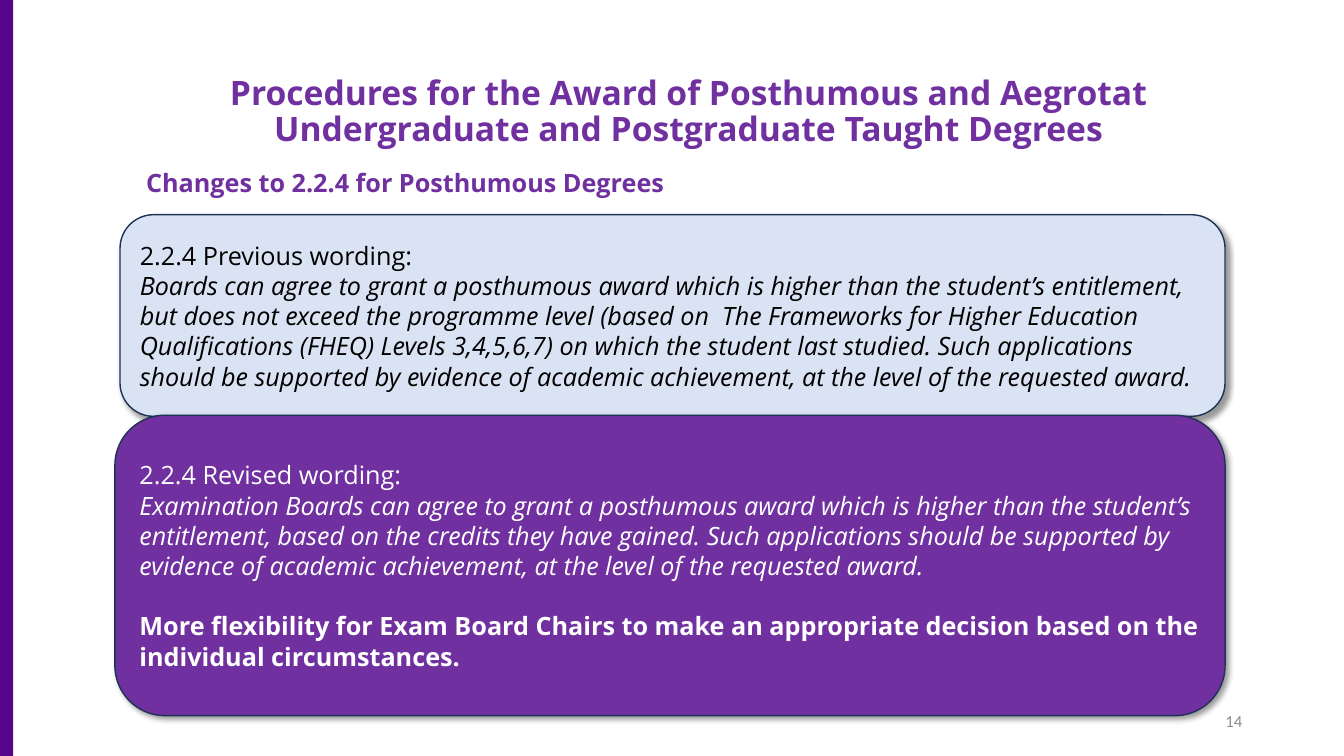
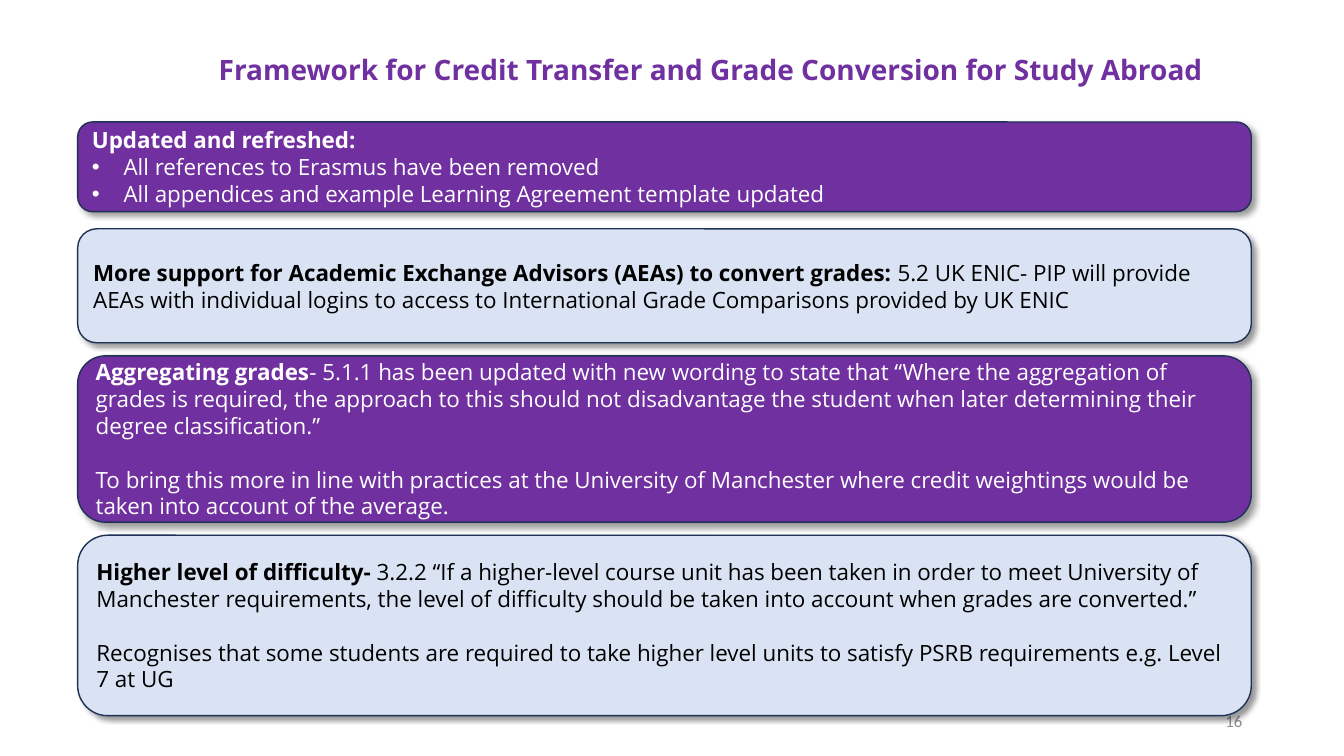
import dataclasses

import lxml.etree
import pptx
import pptx.dml.color
import pptx.enum.shapes
import pptx.enum.text
import pptx.oxml.ns
import pptx.util

WIDE, HIGH = 13.33, 7.5
PURPLE, BAND, PALE = "7030A0", "57068C", "DAE3F3"
EDGE, GREY, BLACK, WHITE = "1E3256", "8C8C8C", "000000", "FFFFFF"
FACE = "Open Sans"
ALIGN = pptx.enum.text.PP_ALIGN
ANCHOR = pptx.enum.text.MSO_ANCHOR
SHAPE = pptx.enum.shapes.MSO_SHAPE


@dataclasses.dataclass(frozen=True)
class Area:
    left: float
    top: float
    width: float
    height: float


@dataclasses.dataclass(frozen=True)
class Run:
    text: str
    bold: bool = False
    slant: bool = False


@dataclasses.dataclass(frozen=True)
class Para:
    runs: tuple[Run, ...]
    gap: float = 0
    dot: bool = False


@dataclasses.dataclass(frozen=True)
class Style:
    size: float
    ink: str
    face: str = FACE
    align: int = ALIGN.LEFT
    anchor: int = ANCHOR.MIDDLE
    space: float = 1.0


@dataclasses.dataclass(frozen=True)
class Panel:
    area: Area
    dark: bool
    paras: tuple[Para, ...]


def across(share: float) -> int:
    return pptx.util.Inches(WIDE * share / 100)


def down(share: float) -> int:
    return pptx.util.Inches(HIGH * share / 100)


def place(area: Area) -> tuple[int, int, int, int]:
    return across(area.left), down(area.top), across(area.width), down(area.height)


def color(code: str) -> pptx.dml.color.RGBColor:
    return pptx.dml.color.RGBColor.from_string(code)


def node(parent, tag: str, **attrs: str):
    return lxml.etree.SubElement(parent, pptx.oxml.ns.qn(tag), attrs)


def bullet(para) -> None:
    props = para._p.get_or_add_pPr()
    indent = across(2.35)
    props.set("marL", str(indent))
    props.set("indent", str(-indent))
    node(props, "a:buFont", typeface="Arial")
    node(props, "a:buChar", char="•")


def write(shape, paras: tuple[Para, ...], style: Style) -> None:
    frame = shape.text_frame
    frame.word_wrap = True
    frame.vertical_anchor = style.anchor
    for index, item in enumerate(paras):
        para = frame.add_paragraph() if index else frame.paragraphs[0]
        para.alignment = style.align
        para.line_spacing = style.space
        if item.gap:
            para.space_before = pptx.util.Pt(item.gap)
        if item.dot:
            bullet(para)
        font = para.font
        font.name, font.size = style.face, pptx.util.Pt(style.size)
        font.color.rgb = color(style.ink)
        font.bold = all(run.bold for run in item.runs)
        font.italic = all(run.slant for run in item.runs)
        for run in item.runs:
            piece = para.add_run()
            piece.text = run.text
            if run.bold != font.bold:
                piece.font.bold = run.bold


def label(slide, area: Area, text: str, style: Style) -> None:
    box = slide.shapes.add_textbox(*place(area))
    write(box, (Para((Run(text, True),)),), style)


def number(slide, text: str) -> None:
    box = slide.shapes.add_textbox(*place(Area(70.67, 92.67, 22.5, 5.33)))
    write(box, (Para((Run(text),)),), Style(12, GREY, "Calibri", ALIGN.RIGHT))


def solid(slide, kind, area: Area, fill: str):
    shape = slide.shapes.add_shape(kind, *place(area))
    shape.shadow.inherit = False
    shape.fill.solid()
    shape.fill.fore_color.rgb = color(fill)
    shape.line.fill.background()
    return shape


def panel(slide, item: Panel, size: float) -> None:
    shape = solid(slide, SHAPE.ROUNDED_RECTANGLE, item.area, PURPLE if item.dark else PALE)
    shape.line.color.rgb = color(EDGE)
    shape.line.width = pptx.util.Pt(1)
    effects = shape._element.spPr.find(pptx.oxml.ns.qn("a:effectLst"))
    shade = node(
        effects, "a:outerShdw", blurRad=str(pptx.util.Pt(4)), dist=str(pptx.util.Pt(3)),
        dir=str(45 * 60000), algn="tl", rotWithShape="0",
    )
    node(node(shade, "a:srgbClr", val=BLACK), "a:alpha", val="40000")
    write(shape, item.paras, Style(size, WHITE if item.dark else BLACK))


def row(top: float, height: float) -> Area:
    return Area(5.78, top, 87.32, height)


AWARDS = (
    Panel(Area(8.93, 28.4, 82.22, 26.67), False, (
        Para((Run("2.2.4 Previous wording:"),)),
        Para((Run(
            "Boards can agree to grant a posthumous award which is higher than the student’s "
            "entitlement, but does not exceed the programme level (based on  The Frameworks for "
            "Higher Education Qualifications (FHEQ) Levels 3,4,5,6,7) on which the student last "
            "studied. Such applications should be supported by evidence of academic achievement, "
            "at the level of the requested award.", slant=True),)),
    )),
    Panel(Area(8.55, 54.93, 82.6, 39.73), True, (
        Para((Run("2.2.4 Revised wording:"),)),
        Para((Run(
            "Examination Boards can agree to grant a posthumous award which is higher than the "
            "student’s entitlement, based on the credits they have gained. Such applications "
            "should be supported by evidence of academic achievement, at the level of the "
            "requested award.", slant=True),)),
        Para((Run(
            "More flexibility for Exam Board Chairs to make an appropriate decision based on the "
            "individual circumstances.", True),), gap=21.5),
    )),
)

ABROAD = (
    Panel(row(30.27, 15.07), False, (
        Para((
            Run("More support for Academic Exchange Advisors (AEAs) to convert grades: ", True),
            Run("5.2 UK ENIC- PIP will provide AEAs with individual logins to access to "
                "International Grade Comparisons provided by UK ENIC"),
        )),
    )),
    Panel(row(16.13, 11.87), True, (
        Para((Run("Updated and refreshed:", True),)),
        Para((Run("All references to Erasmus have been removed"),), dot=True),
        Para((Run("All appendices and example Learning Agreement template updated"),), dot=True),
    )),
    Panel(row(47.07, 22), True, (
        Para((
            Run("Aggregating grades", True),
            Run("- 5.1.1 has been updated with new wording to state that “Where the aggregation "
                "of grades is required, the approach to this should not disadvantage the student "
                "when later determining their degree classification.”"),
        )),
        Para((Run(
            "To bring this more in line with practices at the University of Manchester where "
            "credit weightings would be taken into account of the average."),), gap=19),
    )),
    Panel(row(70.8, 23.87), False, (
        Para((
            Run("Higher level of difficulty- ", True),
            Run("3.2.2 “If a higher-level course unit has been taken in order to meet University "
                "of Manchester requirements, the level of difficulty should be taken into account "
                "when grades are converted.”"),
        )),
        Para((Run(
            "Recognises that some students are required to take higher level units to satisfy "
            "PSRB requirements e.g. Level 7 at UG"),), gap=19),
    )),
)


def start(deck, page: str, area: Area, title: str, style: Style):
    slide = deck.slides.add_slide(deck.slide_layouts[6])
    number(slide, page)
    label(slide, area, title, style)
    return slide


def main() -> None:
    deck = pptx.Presentation()
    deck.slide_width, deck.slide_height = across(100), down(100)

    slide = start(
        deck, "14", Area(8.1, 7.6, 86.27, 14.53),
        "Procedures for the Award of Posthumous and Aegrotat "
        "Undergraduate and Postgraduate Taught Degrees",
        Style(24, PURPLE, align=ALIGN.CENTER, space=0.9),
    )
    for item in AWARDS:
        panel(slide, item, 18)
    label(slide, Area(10.13, 21.47, 50.04, 5.33), "Changes to 2.2.4 for Posthumous Degrees",
          Style(18, PURPLE, anchor=ANCHOR.TOP))
    solid(slide, SHAPE.RECTANGLE, Area(0, 0, 0.98, 100), BAND)

    slide = start(
        deck, "16", Area(13.43, 6.27, 78.92, 5.33),
        "Framework for Credit Transfer and Grade Conversion for Study Abroad",
        Style(20, PURPLE, align=ALIGN.CENTER, anchor=ANCHOR.TOP),
    )
    for item in ABROAD:
        panel(slide, item, 16)

    deck.save("out.pptx")


if __name__ == "__main__":
    main()
